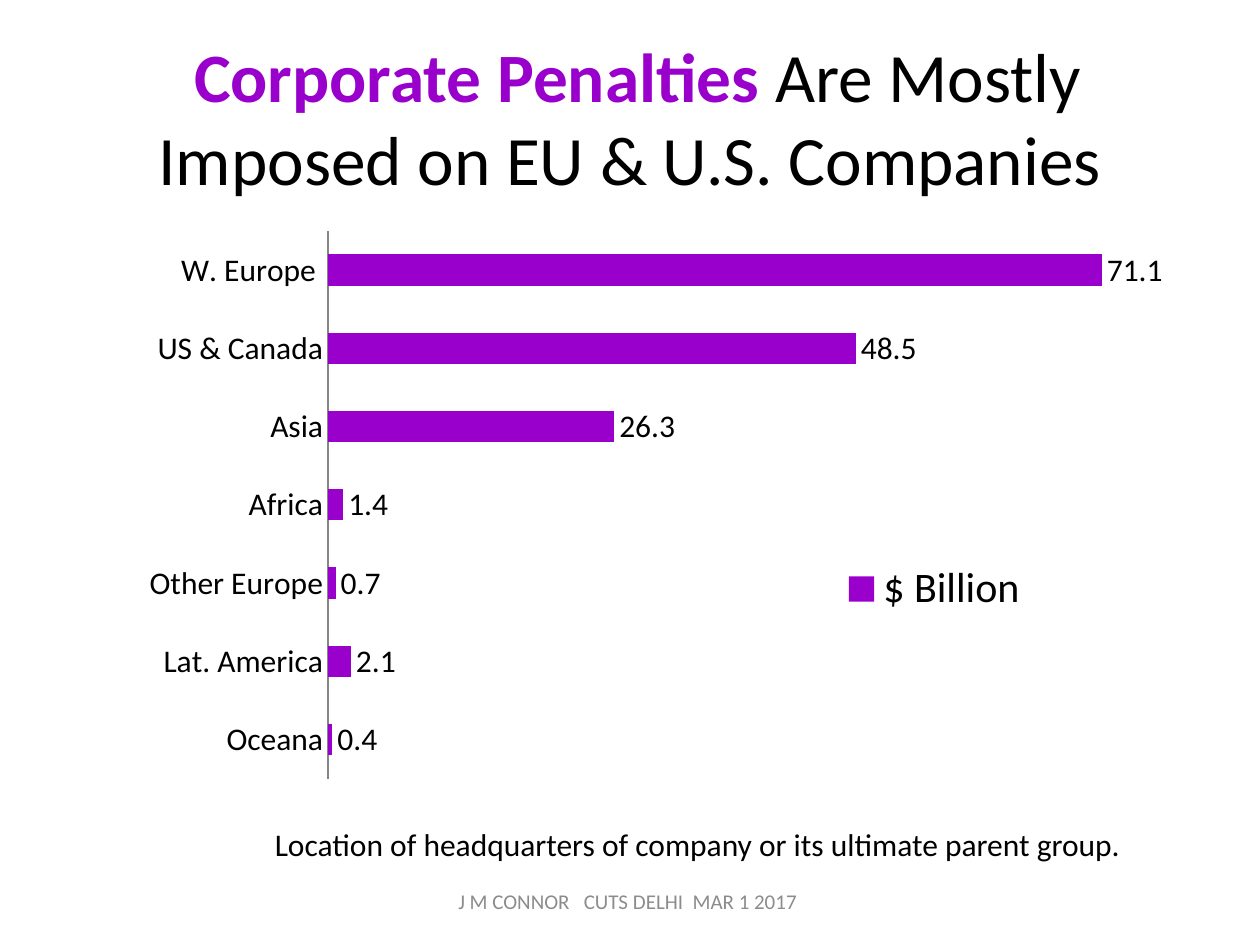
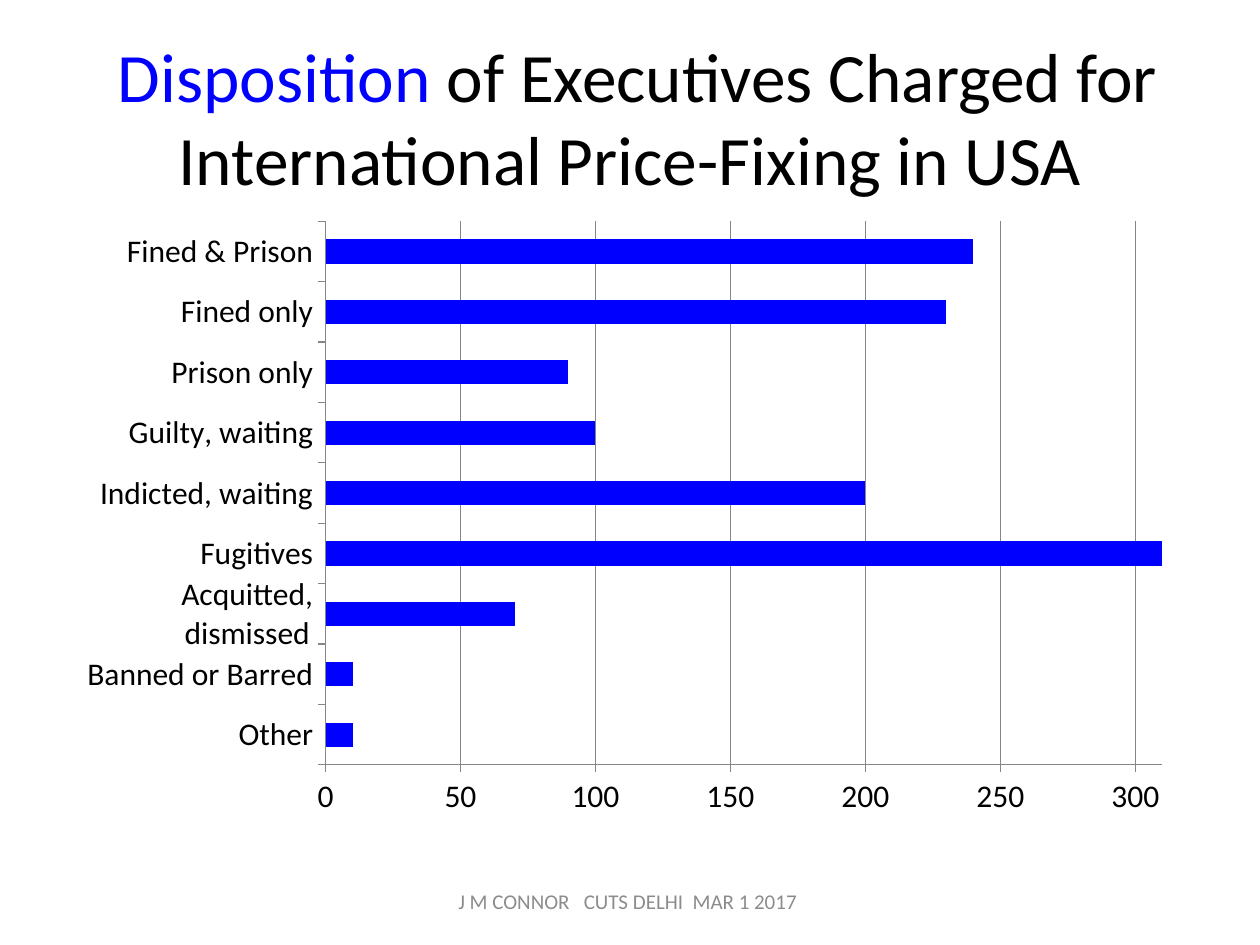
from dataclasses import dataclass

from lxml.etree import SubElement
from pptx import Presentation
from pptx.chart.data import CategoryChartData
from pptx.dml.color import RGBColor as RGB
from pptx.enum.chart import XL_CHART_TYPE as CHART, XL_LABEL_POSITION as LABEL
from pptx.enum.chart import XL_LEGEND_POSITION as LEGEND, XL_TICK_MARK as TICK
from pptx.enum.text import MSO_ANCHOR as ANCHOR, PP_ALIGN as ALIGN
from pptx.oxml.ns import qn
from pptx.util import Cm, Pt


@dataclass(frozen=True)
class Theme:
    """Colours and type sizes shared by the slides."""
    font: str = "Calibri"
    black: RGB = RGB(0, 0, 0)
    purple: RGB = RGB(0x99, 0x00, 0xCC)
    blue: RGB = RGB(0x00, 0x00, 0xFF)
    grey: RGB = RGB(0x8C, 0x8C, 0x8C)
    axis: RGB = RGB(0x86, 0x86, 0x86)
    title: float = 39.6
    legend: float = 24
    body: float = 18
    footer: float = 12


T = Theme()
FOOTER = "J M CONNOR   CUTS DELHI  MAR 1 2017 "
PENALTIES = {
    "Oceana": 0.4, "Lat. America": 2.1, "Other Europe": 0.7, "Africa": 1.4,
    "Asia": 26.3, "US & Canada": 48.5, "W. Europe ": 71.1,
}
DISPOSITIONS = {
    "Other": 10, "Banned or Barred": 10, "Acquitted, dismissed": 70,
    "Fugitives": 310, "Indicted, waiting": 200, "Guilty, waiting": 100,
    "Prison only": 90, "Fined only": 230, "Fined & Prison": 240,
}


def style_font(font, size, color, bold=False):
    """Set the shared typeface with a size, colour and weight."""
    font.name, font.size, font.bold = T.font, Pt(size), bold
    font.color.rgb = color


def add_text(s, box, runs, size, align=ALIGN.CENTER, anchor=ANCHOR.MIDDLE):
    """Add a wrapped text box of (text, colour, bold) runs."""
    tf = s.shapes.add_textbox(*map(Cm, box)).text_frame
    tf.word_wrap = True
    tf.vertical_anchor = anchor
    p = tf.paragraphs[0]
    p.alignment = align
    for text, color, bold in runs:
        r = p.add_run()
        r.text = text
        style_font(r.font, size, color, bold)


def add_frame(prs, lead, rest, color, bold=False):
    """Add a blank slide with its two-colour title and the footer."""
    s = prs.slides.add_slide(prs.slide_layouts[6])
    add_text(s, (1.27, 0.76, 22.86, 3.18),
             [(lead, color, bold), (rest, T.black, False)], T.title)
    add_text(s, (8.68, 17.65, 8.05, 1.02), [(FOOTER, T.grey, False)], T.footer)
    return s


def set_layout(parent, index, box, inner=False):
    """Place a chart part by fractions of the chart area."""
    for old in parent.findall(qn("c:layout")):
        parent.remove(old)
    layout = SubElement(parent, qn("c:layout"))
    parent.insert(index, layout)
    manual = SubElement(layout, qn("c:manualLayout"))
    settings = [("layoutTarget", "inner")] if inner else []
    settings += [("xMode", "edge"), ("yMode", "edge"), *zip("xywh", box)]
    for tag, value in settings:
        SubElement(manual, qn(f"c:{tag}")).set("val", str(value))


def style_line(line):
    """Give an axis or grid line the shared thin grey stroke."""
    line.color.rgb = T.axis
    line.width = Pt(0.7)


def add_bars(s, box, plot_box, name, values, color, top, step, overlap=0):
    """Add a one-series horizontal bar chart."""
    data = CategoryChartData()
    data.categories = values.keys()
    data.add_series(name, values.values())
    chart = s.shapes.add_chart(CHART.BAR_CLUSTERED, *map(Cm, box), data).chart
    chart.has_title = chart.has_legend = False
    style_font(chart.font, T.body, T.black)
    plot = chart.plots[0]
    plot.gap_width, plot.overlap = 150, overlap
    plot.vary_by_categories = False
    fill = plot.series[0].format.fill
    fill.solid()
    fill.fore_color.rgb = color
    axis = chart.value_axis
    axis.minimum_scale, axis.maximum_scale, axis.major_unit = 0, top, step
    for ax in (axis, chart.category_axis):
        ax.major_tick_mark, ax.minor_tick_mark = TICK.OUTSIDE, TICK.NONE
        style_line(ax.format.line)
    style_line(axis.major_gridlines.format.line)
    set_layout(chart.element.find(f".//{qn('c:plotArea')}"), 0, plot_box, True)
    return chart


def label_bars(chart):
    """Replace the value axis with labels at the bar ends."""
    chart.value_axis.has_major_gridlines = False
    chart.value_axis.visible = False
    chart.category_axis.major_tick_mark = TICK.NONE
    plot = chart.plots[0]
    plot.has_data_labels = True
    labels = plot.data_labels
    labels.show_value = True
    labels.number_format, labels.number_format_is_linked = "0.0", False
    labels.position = LABEL.OUTSIDE_END
    style_font(labels.font, T.body, T.black)


def add_legend(chart, box):
    """Show the legend inside the plot."""
    chart.has_legend = True
    legend = chart.legend
    legend.position = LEGEND.TOP
    legend.include_in_layout = False
    style_font(legend.font, T.legend, T.black)
    set_layout(chart.element.find(f".//{qn('c:legend')}"), 1, box)


def add_penalties(prs):
    """Build the slide on corporate penalties by region."""
    s = add_frame(prs, " Corporate Penalties ",
                  "Are Mostly Imposed on EU & U.S. Companies", T.purple, True)
    chart = add_bars(s, (1.26, 4.23, 23.28, 11.85), (0.23, 0.036, 0.754, 0.932),
                     "$ Billion", PENALTIES, T.purple, 80, 10, -25)
    label_bars(chart)
    add_legend(chart, (0.67, 0.6, 0.17, 0.09))
    add_text(s, (5.29, 16.51, 18.2, 1.02),
             [("Location of headquarters of company or its ultimate parent group.",
               T.black, False)], T.body, ALIGN.LEFT, ANCHOR.TOP)


def add_dispositions(prs):
    """Build the slide on the executives charged."""
    s = add_frame(prs, " Disposition ",
                  "of Executives Charged for International Price-Fixing in USA",
                  T.blue)
    add_bars(s, (1.26, 4.23, 22.86, 12.91), (0.232, 0.018, 0.738, 0.849),
             "Series 1", DISPOSITIONS, T.blue, 310, 50)


def main():
    """Build and save the presentation."""
    prs = Presentation()
    prs.slide_width, prs.slide_height = Cm(25.4), Cm(19.05)
    add_penalties(prs)
    add_dispositions(prs)
    prs.save("out.pptx")


if __name__ == "__main__":
    main()
